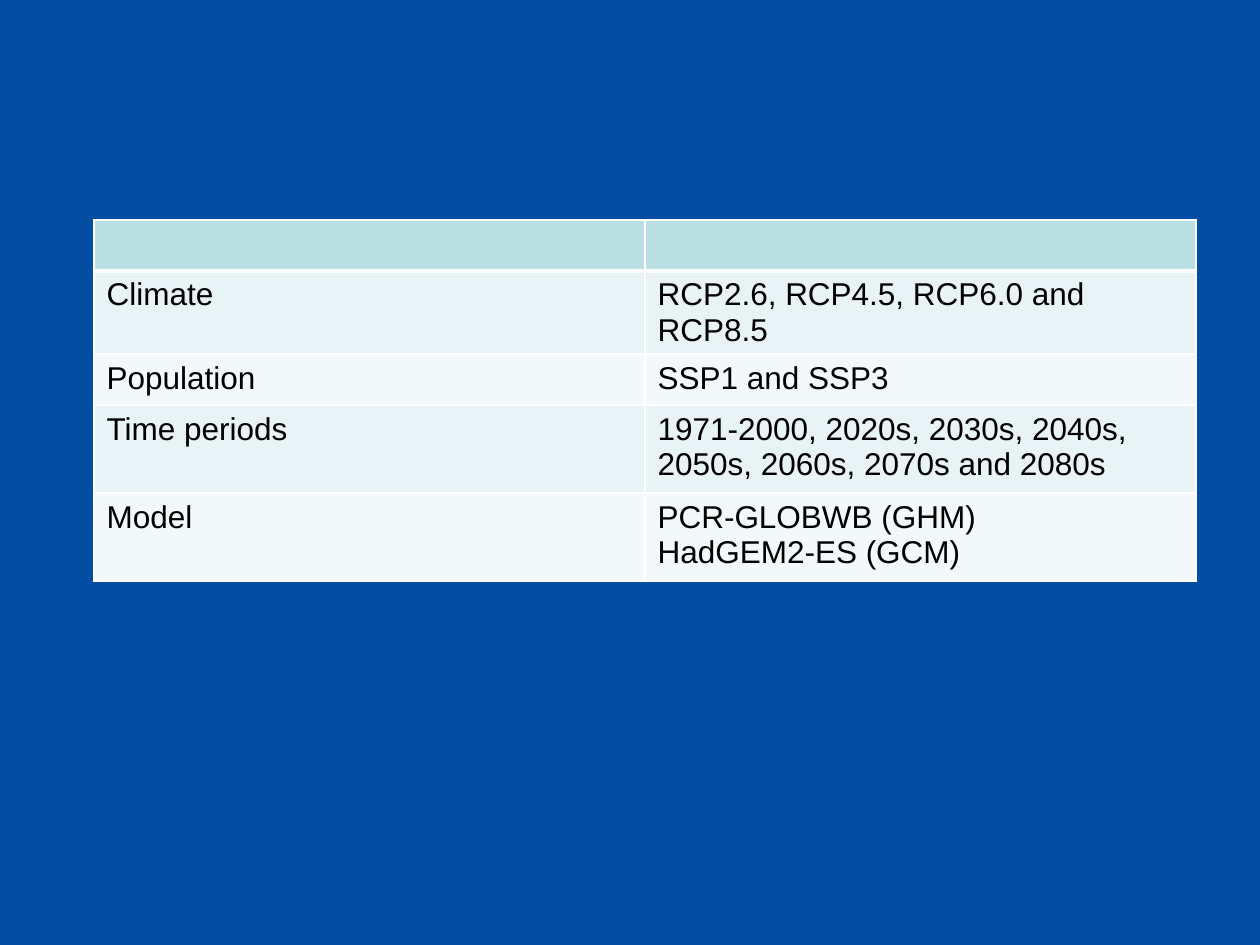
import lxml.etree
import pptx
import pptx.dml.color
import pptx.oxml.ns
import pptx.util

EMU_PER_PX = 914400 // 126
BLANK_LAYOUT = 6


def px(length):
    return pptx.util.Emu(length * EMU_PER_PX)


def color(hex_string):
    return pptx.dml.color.RGBColor.from_string(hex_string)


class ScenarioSlide:
    BACKGROUND = "034EA2"
    HEADER_FILL = "BBE0E3"
    BAND_FILLS = ("E7F3F4", "F3F9FA")
    BORDER = "FFFFFF"
    TEXT = "000000"
    FONT = {"name": "Arial", "size": pptx.util.Pt(18), "bold": False}

    def __init__(self, presentation):
        self.slide = presentation.slides.add_slide(
            presentation.slide_layouts[BLANK_LAYOUT])
        background = self.slide.background.fill
        background.solid()
        background.fore_color.rgb = color(self.BACKGROUND)

    def add_table(self, left, top, column_width, row_heights, rows):
        column_count = len(rows[0])
        table = self.slide.shapes.add_table(
            len(rows), column_count, px(left), px(top),
            px(column_width * column_count), px(sum(row_heights))).table
        for column in table.columns:
            column.width = px(column_width)
        for index, (height, texts) in enumerate(zip(row_heights, rows)):
            table.rows[index].height = px(height)
            fill = self.BAND_FILLS[(index - 1) % 2] if index else self.HEADER_FILL
            widths = {"L": 1, "R": 1, "T": 3 if index == 1 else 1,
                      "B": 1 if index else 3}
            for cell, text in zip(table.rows[index].cells, texts):
                self.format_cell(cell, text, fill, widths)

    def format_cell(self, cell, text, fill, border_widths):
        cell.text = text
        cell.fill.solid()
        cell.fill.fore_color.rgb = color(fill)
        for paragraph in cell.text_frame.paragraphs:
            for attribute, value in self.FONT.items():
                setattr(paragraph.font, attribute, value)
            paragraph.font.color.rgb = color(self.TEXT)
        self.add_borders(cell, border_widths)

    def add_borders(self, cell, widths):
        """Put the border lines ahead of the fill, as the schema requires."""
        qn = pptx.oxml.ns.qn
        properties = cell._tc.get_or_add_tcPr()
        for position, (side, width) in enumerate(widths.items()):
            line = lxml.etree.Element(qn(f"a:ln{side}"), w=str(pptx.util.Pt(width)))
            solid = lxml.etree.SubElement(line, qn("a:solidFill"))
            lxml.etree.SubElement(solid, qn("a:srgbClr"), val=self.BORDER)
            properties.insert(position, line)


def main():
    presentation = pptx.Presentation()
    presentation.slide_width = px(1260)
    presentation.slide_height = px(945)
    scenarios = [
        ("", ""),
        ("Climate", "RCP2.6, RCP4.5, RCP6.0 and RCP8.5"),
        ("Population", "SSP1 and SSP3"),
        ("Time periods",
         "1971-2000, 2020s, 2030s, 2040s, 2050s, 2060s, 2070s and 2080s"),
        ("Model", "PCR-GLOBWB (GHM)\nHadGEM2-ES (GCM)"),
    ]
    ScenarioSlide(presentation).add_table(
        left=94, top=220, column_width=551,
        row_heights=[51, 51, 51, 88, 88], rows=scenarios)
    presentation.save("out.pptx")


if __name__ == "__main__":
    main()
